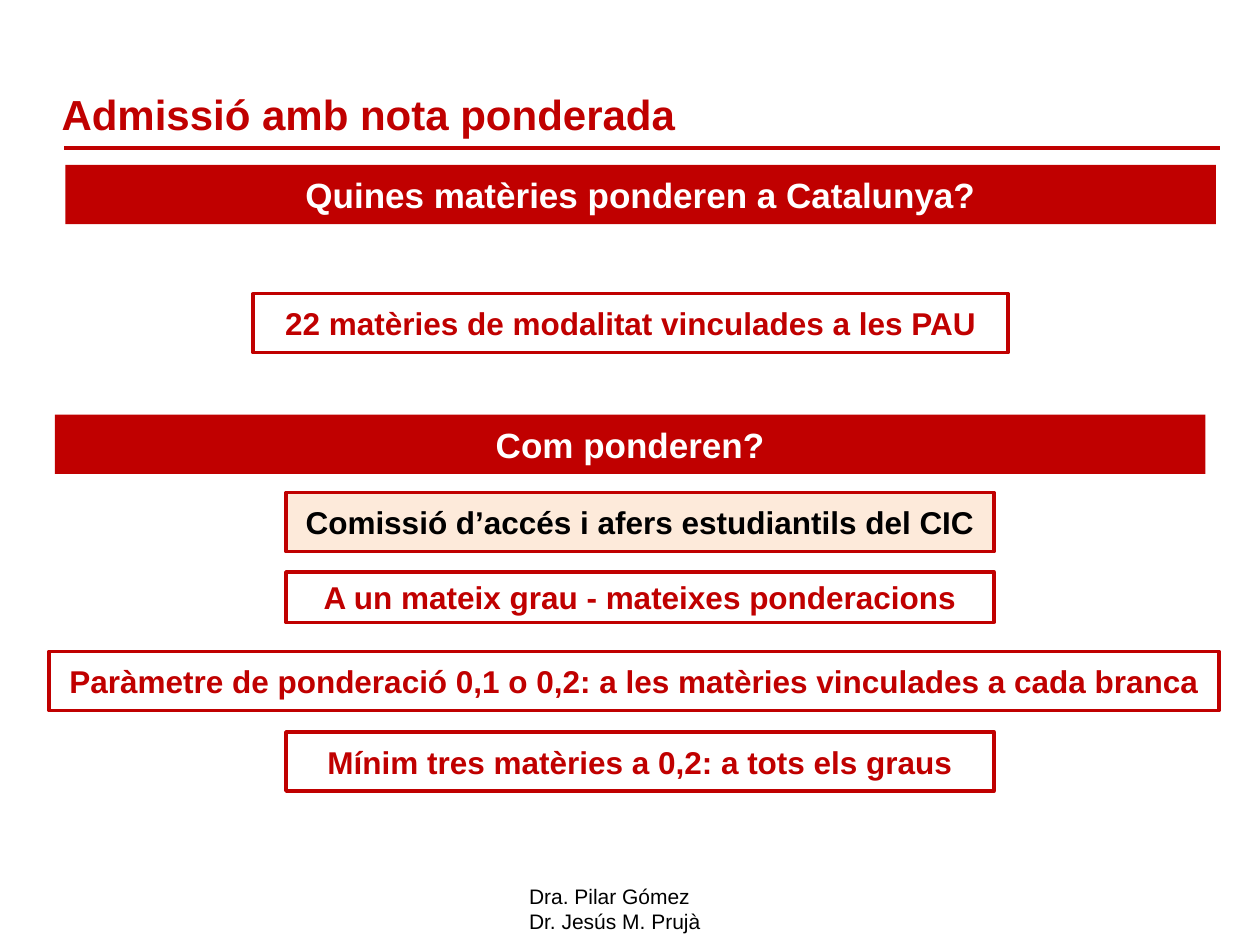
from dataclasses import dataclass
from typing import Optional

from lxml.etree import SubElement
from pptx import Presentation
from pptx.dml.color import RGBColor
from pptx.enum.shapes import MSO_CONNECTOR, MSO_SHAPE
from pptx.enum.text import MSO_ANCHOR, PP_ALIGN
from pptx.oxml.ns import qn
from pptx.util import Pt

RED = RGBColor(0xC0, 0x00, 0x00)
PEACH = RGBColor(0xFD, 0xEA, 0xDA)
WHITE = RGBColor(0xFF, 0xFF, 0xFF)
BLACK = RGBColor(0x00, 0x00, 0x00)
FONT = "Arial"
BOX_HEIGHT = 33.8


@dataclass
class Box:
    text: str
    left: float
    top: float
    width: float
    height: float = BOX_HEIGHT
    size: float = 18
    color: RGBColor = RED
    fill: Optional[RGBColor] = None
    outlined: bool = True


@dataclass
class Banner(Box):
    """A solid red section heading."""
    width: float = 657.4
    size: float = 20
    color: RGBColor = WHITE
    fill: Optional[RGBColor] = RED
    outlined: bool = False


POINT_LEFT, POINT_WIDTH = 163.4, 404.6

BOXES = [
    Banner("Quines matèries ponderen a Catalunya?", 37.4, 94.3),
    Box("22 matèries de modalitat vinculades a les PAU", 144.7, 167.8, 431.3),
    Banner("Com ponderen?", 31.4, 237),
    Box("Comissió d’accés i afers estudiantils del CIC",
        POINT_LEFT, 281.5, POINT_WIDTH, color=BLACK, fill=PEACH),
    Box("A un mateix grau - mateixes ponderacions",
        POINT_LEFT, 326.9, POINT_WIDTH, 28.8),
    Box("Paràmetre de ponderació 0,1 o 0,2: a les matèries vinculades a cada branca",
        28, 372.2, 668.6),
    Box("Mínim tres matèries a 0,2: a tots els graus",
        POINT_LEFT, 418.3, POINT_WIDTH),
]


def add_run(p, text: str, size: float, color: RGBColor, bold: bool) -> None:
    r = p.add_run()
    r.text = text
    r.font.name = FONT
    r.font.size = Pt(size)
    r.font.bold = bold
    r.font.color.rgb = color


def add_box(s, box: Box) -> None:
    sp = s.shapes.add_shape(MSO_SHAPE.RECTANGLE, Pt(box.left), Pt(box.top),
                            Pt(box.width), Pt(box.height))
    sp.shadow.inherit = False
    if box.fill is None:
        sp.fill.background()
    else:
        sp.fill.solid()
        sp.fill.fore_color.rgb = box.fill
    if box.outlined:
        sp.line.color.rgb = RED
        sp.line.width = Pt(2)
    else:
        sp.line.fill.background()
    tf = sp.text_frame
    tf.word_wrap = True
    tf.vertical_anchor = MSO_ANCHOR.MIDDLE
    p = tf.paragraphs[0]
    p.alignment = PP_ALIGN.CENTER
    add_run(p, box.text, box.size, box.color, bold=True)


def add_rule(s) -> None:
    line = s.shapes.add_connector(MSO_CONNECTOR.STRAIGHT,
                                  Pt(36.7), Pt(84.4), Pt(697), Pt(84.4))
    line.line.color.rgb = RED
    line.line.width = Pt(2.25)
    SubElement(line._element.spPr, qn("a:effectLst"))


def add_authors(s) -> None:
    tf = s.shapes.add_textbox(Pt(295.2), Pt(501.1), Pt(113.8), Pt(36)).text_frame
    tf.word_wrap = False
    add_run(tf.paragraphs[0], "Dra. Pilar Gómez", 12, BLACK, bold=False)
    add_run(tf.add_paragraph(), "Dr. Jesús M. Prujà", 12, BLACK, bold=False)


def add_title(s) -> None:
    tf = s.shapes.add_textbox(Pt(28.1), Pt(45.4), Pt(674.6), Pt(39.6)).text_frame
    tf.word_wrap = True
    tf.vertical_anchor = MSO_ANCHOR.MIDDLE
    add_run(tf.paragraphs[0], "Admissió amb nota ponderada", 24, RED, bold=True)


def main() -> None:
    prs = Presentation()
    prs.slide_width, prs.slide_height = Pt(720), Pt(540)
    s = prs.slides.add_slide(prs.slide_layouts[6])
    add_rule(s)
    add_authors(s)
    add_title(s)
    for box in BOXES:
        add_box(s, box)
    prs.save("out.pptx")


if __name__ == "__main__":
    main()
